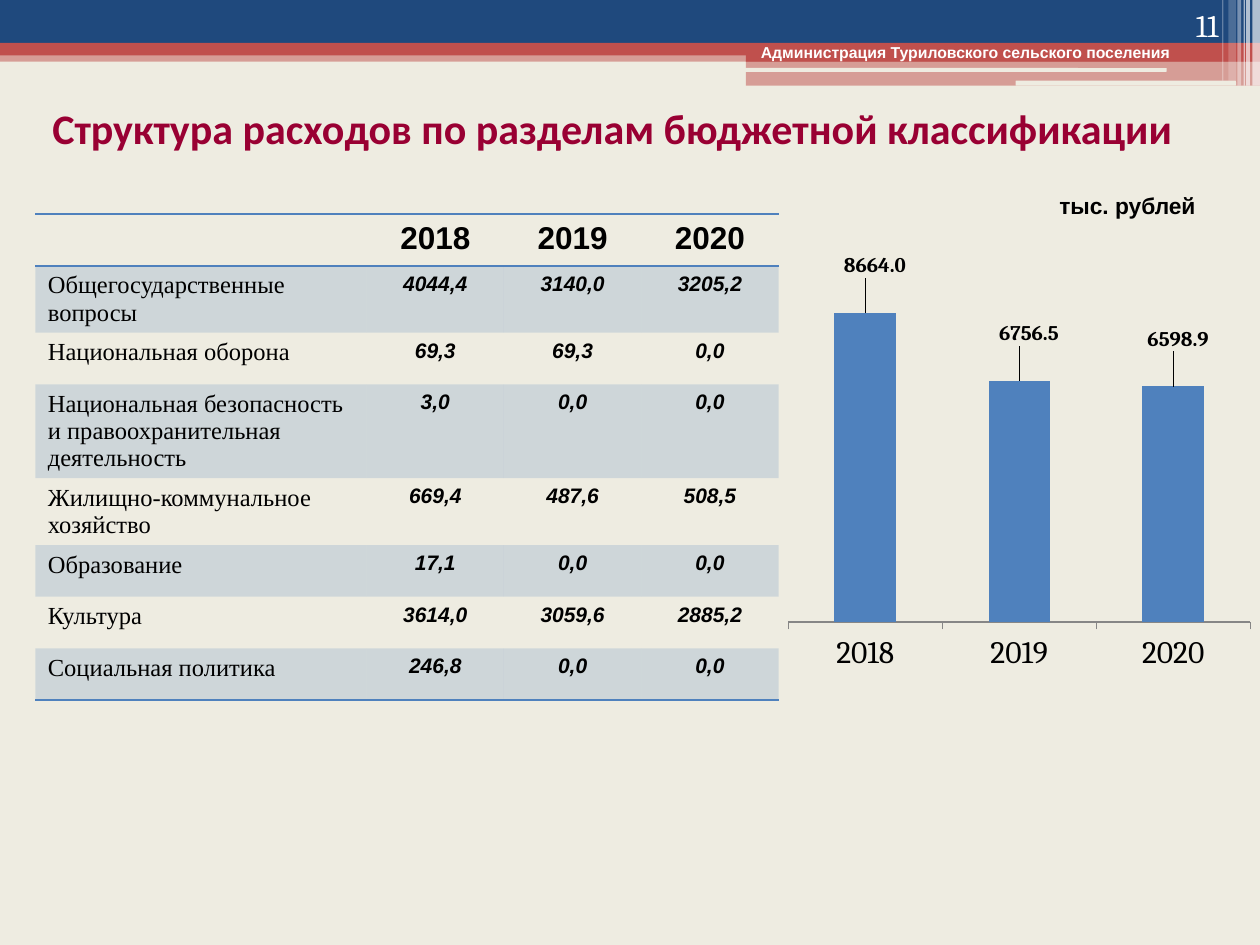
from lxml import etree
from pptx import Presentation
from pptx.chart.data import CategoryChartData
from pptx.dml.color import RGBColor
from pptx.enum.chart import XL_CHART_TYPE, XL_LABEL_POSITION, XL_TICK_MARK
from pptx.enum.shapes import MSO_SHAPE
from pptx.enum.text import MSO_ANCHOR, PP_ALIGN
from pptx.oxml import parse_xml
from pptx.oxml.ns import nsdecls, qn
from pptx.util import Inches, Pt

RECT, ROUND = MSO_SHAPE.RECTANGLE, MSO_SHAPE.ROUNDED_RECTANGLE
LEFT, MID, RIGHT = PP_ALIGN.LEFT, PP_ALIGN.CENTER, PP_ALIGN.RIGHT
TOP, LOW = MSO_ANCHOR.TOP, MSO_ANCHOR.BOTTOM
COLUMN = XL_CHART_TYPE.COLUMN_CLUSTERED
ABOVE = XL_LABEL_POSITION.OUTSIDE_END
OUT, NONE = XL_TICK_MARK.OUTSIDE, XL_TICK_MARK.NONE

CREAM = RGBColor(0xEE, 0xEC, 0xE1)
NAVY = RGBColor(0x1F, 0x49, 0x7D)
RED = RGBColor(0xC0, 0x50, 0x4D)
BLUE = RGBColor(0x4F, 0x81, 0xBD)
WINE = RGBColor(0x99, 0x00, 0x33)
GRAY = RGBColor(0x86, 0x86, 0x86)
WHITE = RGBColor(0xFF, 0xFF, 0xFF)
BLACK = RGBColor(0, 0, 0)

BANDS = [
    (RECT, (0, 0.4, 10, 0.09), RED, 50),
    (RECT, (0, 0, 10, 0.34), NAVY, 100),
    (RECT, (0, 0.34, 10, 0.1), RED, 100),
    (RECT, (5.92, 0.39, 4.08, 0.1), RED, 100),
    (RECT, (5.92, 0.48, 4.08, 0.2), RED, 50),
    (ROUND, (5.91, 0.54, 3.35, 0.03), CREAM, 100),
    (ROUND, (8.06, 0.64, 1.75, 0.04), CREAM, 100),
]
STRIPES = [
    (9.94, 0.06, 0.68, 65), (9.89, 0.03, 0.68, 65), (9.87, 0.01, 0.68, 60),
    (9.82, 0.03, 0.68, 40), (9.75, 0.06, 0.64, 20), (9.7, 0.01, 0.64, 30),
]
TITLE = "Структура расходов по разделам бюджетной классификации"
YEARS = ["2018", "2019", "2020"]
ROWS = [
    ("", *YEARS),
    ("Общегосударственные вопросы", "4044,4", "3140,0", "3205,2"),
    ("Национальная оборона", "69,3", "69,3", "0,0"),
    ("Национальная безопасность и правоохранительная деятельность",
     "3,0", "0,0", "0,0"),
    ("Жилищно-коммунальное хозяйство", "669,4", "487,6", "508,5"),
    ("Образование", "17,1", "0,0", "0,0"),
    ("Культура", "3614,0", "3059,6", "2885,2"),
    ("Социальная политика", "246,8", "0,0", "0,0"),
]
WIDTHS = [2.63, 1.09, 1.09, 1.09]
TOTALS = [8664, 6756.5, 6598.9]
SHIFTS = [(0.02, -0.07), (0.02, -0.07), (0.01, -0.07)]
NOTES = [
    ("Администрация Туриловского сельского поселения",
     (5.94, 0.29, 3.62, 0.25), dict(size=9, color=WHITE, bold=True)),
    ("11", (8.94, 0, 0.83, 0.4),
     dict(size=18, font="Cambria", color=WHITE, align=RIGHT, anchor=LOW)),
    ("тыс. рублей", (8.31, 1.47, 1.5, 0.32), dict(size=13, bold=True)),
]


def inches(box):
    return [Inches(n) for n in box]


def paint(fill, color, alpha=100):
    fill.solid()
    fill.fore_color.rgb = color
    if alpha < 100:
        tag = fill._xPr.find(".//" + qn("a:srgbClr"))
        etree.SubElement(tag, qn("a:alpha")).set("val", str(alpha * 1000))


def write(frame, text, size=12, font="Arial", color=BLACK, bold=False,
          slant=False, align=LEFT, anchor=TOP):
    frame.word_wrap = True
    frame.vertical_anchor = anchor
    par = frame.paragraphs[0]
    par.alignment = align
    run = par.add_run()
    run.text = text
    face = run.font
    face.size, face.name = Pt(size), font
    face.bold, face.italic = bold, slant
    face.color.rgb = color


def rule(cell, side):
    cell._tc.get_or_add_tcPr().insert(0, parse_xml(
        f'<a:{side} {nsdecls("a")} w="12700"><a:solidFill>'
        f'<a:srgbClr val="{BLUE}"/></a:solidFill></a:{side}>'))


def add_band(slide, kind, box, color, alpha):
    band = slide.shapes.add_shape(kind, *inches(box))
    band.shadow.inherit = False
    band.line.fill.background()
    paint(band.fill, color, alpha)


def fill_cell(cell, text, row, col):
    if row % 2:
        paint(cell.fill, BLUE, 20)
    else:
        cell.fill.background()
    if row in (0, len(ROWS) - 1):
        rule(cell, "lnB")
    if row == 0:
        rule(cell, "lnT")
    if not text:
        return
    if row == 0:
        look = dict(size=18, bold=True, align=MID)
    elif col == 0:
        look = dict(size=14, font="Times New Roman")
    else:
        look = dict(bold=True, slant=True, align=MID)
    write(cell.text_frame, text, **look)


def add_grid(slide):
    box = (0.28, 1.7, sum(WIDTHS), 0.41 * len(ROWS))
    grid = slide.shapes.add_table(len(ROWS), len(WIDTHS), *inches(box)).table
    grid.horz_banding = False
    grid._tbl.tblPr[0].text = "{2D5ABB26-0587-4C30-8999-92F81FD0307C}"
    for col, width in enumerate(WIDTHS):
        grid.columns[col].width = Inches(width)
    for row, texts in enumerate(ROWS):
        for col, text in enumerate(texts):
            fill_cell(grid.cell(row, col), text, row, col)


def layout(items):
    tags = "".join(f'<c:{k} val="{v}"/>' for k, v in items)
    return parse_xml(f'<c:layout {nsdecls("c")}><c:manualLayout>{tags}'
                     '</c:manualLayout></c:layout>')


def add_bars(slide):
    data = CategoryChartData(number_format="0.0")
    data.categories = YEARS
    data.add_series("Series 1", TOTALS)
    box = inches((6.18, 2.02, 3.82, 3.39))
    chart = slide.shapes.add_chart(COLUMN, *box, data).chart
    chart.has_legend = chart.has_title = False
    chart.font.size, chart.font.name = Pt(18), "Cambria"
    chart.font.color.rgb = BLACK
    value, cat = chart.value_axis, chart.category_axis
    value.visible = value.has_major_gridlines = False
    value.minimum_scale, value.maximum_scale = 0, 10000
    cat.major_tick_mark, cat.minor_tick_mark = OUT, NONE
    cat.format.line.color.rgb = GRAY

    area = chart._chartSpace.chart.plotArea
    for old in area.findall(qn("c:layout")):
        area.remove(old)
    area.insert(0, layout([
        ("layoutTarget", "inner"), ("xMode", "edge"), ("yMode", "edge"),
        ("x", 0.02), ("y", 0.02), ("w", 0.96), ("h", 0.84)]))

    plot = chart.plots[0]
    plot.gap_width, plot.vary_by_categories = 150, False
    bars = plot.series[0]
    paint(bars.format.fill, BLUE)
    for i, (x, y) in enumerate(SHIFTS):
        label = bars.points[i].data_label
        label.position = ABOVE
        face = label.font
        face.size, face.bold, face.name = Pt(12), True, "Cambria"
        face.color.rgb = BLACK
        tag = bars._element.findall(".//" + qn("c:dLbl"))[i]
        tag.insert(1, layout([("x", x), ("y", y)]))


def main():
    deck = Presentation()
    deck.slide_width, deck.slide_height = Inches(10), Inches(7.5)
    slide = deck.slides.add_slide(deck.slide_layouts[5])
    paint(slide.background.fill, CREAM)
    for band in BANDS:
        add_band(slide, *band)
    for left, width, high, alpha in STRIPES:
        add_band(slide, RECT, (left, 0, width, high), WHITE, alpha)
    add_grid(slide)
    title = slide.shapes.title
    title.left, title.top, title.width, title.height = inches(
        (0, 0.76, 9.72, 0.5))
    write(title.text_frame, TITLE, size=24, font="Calibri", color=WINE,
          bold=True, align=MID)
    for text, box, look in NOTES:
        note = slide.shapes.add_textbox(*inches(box))
        write(note.text_frame, text, **look)
    add_bars(slide)
    deck.save("out.pptx")


if __name__ == "__main__":
    main()
